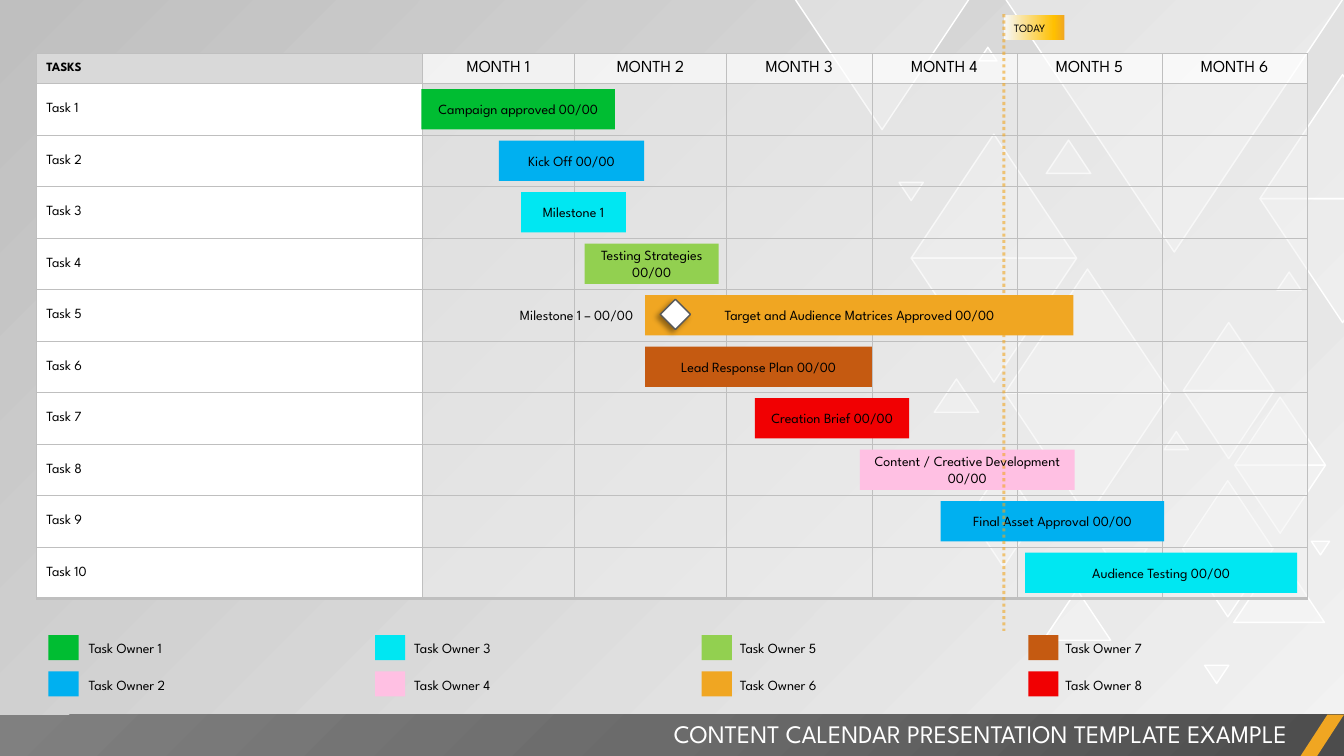
import dataclasses
import pptx
import pptx.dml.color
import pptx.enum.shapes
import pptx.enum.text
import pptx.oxml
import pptx.oxml.ns
import pptx.util

Pt = pptx.util.Pt
qn = pptx.oxml.ns.qn
Kind = pptx.enum.shapes.MSO_SHAPE
Align = pptx.enum.text.PP_ALIGN
Anchor = pptx.enum.text.MSO_ANCHOR
NAMESPACE = pptx.oxml.ns.nsdecls("a")


@dataclasses.dataclass(frozen=True)
class Theme:
    font: str = "League Spartan"
    title_size: float = 18
    month_size: float = 12
    body_size: float = 10
    head_size: float = 9
    flag_size: float = 8
    black: str = "000000"
    white: str = "FFFFFF"
    pale: str = "F2F2F2"
    head: str = "D9D9D9"
    rule: str = "BFBFBF"
    outline: str = "595959"
    green: str = "00BD32"
    blue: str = "00B0F0"
    cyan: str = "00E7F2"
    pink: str = "FFC0E3"
    lime: str = "92D050"
    amber: str = "F0A622"
    brown: str = "C55A11"
    red: str = "F10002"
    backdrop: tuple = ((0, "F2F2F2", 40), (100, "BFBFBF", 100))
    footer: tuple = ((0, "4C4C4C", 100), (50, "6B6B6B", 100), (100, "808080", 100))
    flag: tuple = ((0, "F6F8FC", 100), (83, "FFC000", 100), (100, "F0A622", 100))


@dataclasses.dataclass(frozen=True)
class Box:
    left: float
    top: float
    width: float
    height: float

    def inner(self, left, top, width, height):
        return Box(self.left + left, self.top + top, width, height)

    def lengths(self):
        return [Pt(value) for value in dataclasses.astuple(self)]


THEME = Theme()
PAGE = Box(0, 0, 960, 540)
HEADER_HEIGHT, ROW_HEIGHT, BAR_HEIGHT = 21.4, 36.8, 28.8
COLUMN_WIDTHS = [275.8] + [108.7] * 2 + [103.7] * 4
CALENDAR = Box(25.9, 38.2, sum(COLUMN_WIDTHS), HEADER_HEIGHT + 10 * ROW_HEIGHT)

TRIANGLES = [
    ("pair", 650.9, 95.8, 118.1), ("pair", 717.8, 192.2, 118.1),
    ("down", 717.8, -1.4, 241.9), ("up", 881.3, 396, 64.8),
    ("pair", 844.6, 343.4, 64.8), ("pair", 845.3, 230.4, 64.8),
    ("pair", 882, 283.7, 64.8), ("up", 745.2, 421.2, 48.2),
    ("pair", 692.6, 332.6, 48.2), ("pair", 900, 53.3, 118.1),
    ("down", 787.7, 391.7, 31.7), ("up", 667.4, 270.7, 31.7),
    ("up", 831.6, 308.2, 17.3), ("down", 860.4, 475.2, 17.3),
    ("down", 642.2, 130.3, 17.3), ("up", 912.2, 194.4, 17.3),
    ("up", 699.1, 33.8, 13), ("down", 936.7, 386.6, 13),
    ("up", 747.4, 100.1, 31.7), ("down", 567.4, -1.4, 125.3),
]
BARS = [
    ("Campaign approved 00/00", 275.1, 138.2, THEME.green),
    ("Kick Off 00/00", 330.5, 103.7, THEME.blue),
    ("Milestone 1", 346.3, 74.9, THEME.cyan),
    ("Testing Strategies 00/00", 391.7, 95.8, THEME.lime),
    ("Target and Audience Matrices Approved 00/00", 434.9, 306, THEME.amber),
    ("Lead Response Plan 00/00", 434.9, 162, THEME.brown),
    ("Creation Brief 00/00", 513.4, 110.2, THEME.red),
    ("Content / Creative Development 00/00", 588.3, 153.4, THEME.pink),
    ("Final Asset Approval 00/00", 645.9, 159.8, THEME.blue),
    ("Audience Testing 00/00", 706.3, 194.4, THEME.cyan),
]
OWNERS = [THEME.green, THEME.blue, THEME.cyan, THEME.pink,
          THEME.lime, THEME.amber, THEME.brown, THEME.red]


def color(value):
    return pptx.dml.color.RGBColor.from_string(value)


def set_opacity(element, percent):
    target = next(element.iter(qn("a:srgbClr")))
    target.append(pptx.oxml.parse_xml(f'<a:alpha {NAMESPACE} val="{percent * 1000}"/>'))


def set_gradient(element, stops, direction):
    marks = "".join(
        f'<a:gs pos="{place * 1000}"><a:srgbClr val="{value}">'
        f'<a:alpha val="{opacity * 1000}"/></a:srgbClr></a:gs>'
        for place, value, opacity in stops)
    solid = next(element.iter(qn("a:solidFill")))
    solid.getparent().replace(solid, pptx.oxml.parse_xml(
        f'<a:gradFill {NAMESPACE} rotWithShape="1"><a:gsLst>{marks}</a:gsLst>{direction}</a:gradFill>'))


def write(frame, text, size, align=Align.LEFT, ink=THEME.black, bold=False):
    para = frame.paragraphs[0]
    para.text = text
    para.alignment = align
    para.font.name = THEME.font
    para.font.size = Pt(size)
    para.font.bold = bold
    para.font.color.rgb = color(ink)


def add_block(page, kind, box, fill, outline=None):
    block = page.shapes.add_shape(kind, *box.lengths())
    block.shadow.inherit = False
    block.fill.solid()
    block.fill.fore_color.rgb = color(fill)
    if outline:
        block.line.color.rgb = color(outline)
        block.line.width = Pt(1)
    else:
        block.line.fill.background()
    block.text_frame.word_wrap = True
    block.text_frame.vertical_anchor = Anchor.MIDDLE
    return block


def add_label(page, box, text, align=Align.LEFT, anchor=Anchor.TOP):
    frame = page.shapes.add_textbox(*box.lengths()).text_frame
    frame.word_wrap = True
    frame.vertical_anchor = anchor
    write(frame, text, THEME.body_size, align)


def add_backdrop(page, box):
    page.background.fill.solid()
    page.background.fill.fore_color.rgb = color(THEME.pale)
    set_gradient(page.element, THEME.backdrop, '<a:lin ang="13500000" scaled="0"/>')
    for facing, left, top, width in TRIANGLES:
        height = width * 0.75
        for turn in ("up", "down") if facing == "pair" else (facing,):
            drop = height if facing == "pair" and turn == "down" else 0
            triangle = add_block(page, Kind.ISOSCELES_TRIANGLE,
                                 box.inner(left, top + drop, width, height), THEME.white, THEME.white)
            triangle.rotation = 180 if turn == "down" else 0
            set_opacity(triangle.element, 30)


def add_footer(page, box):
    band = add_block(page, Kind.RECTANGLE, box, THEME.outline)
    set_gradient(band.element, THEME.footer,
                 '<a:path path="circle"><a:fillToRect l="100000" t="100000"/></a:path>')
    accent = add_block(page, Kind.PARALLELOGRAM, box.inner(box.width - 31, 0, 31, box.height), THEME.amber)
    accent.adjustments[0] = 0.65
    title = page.shapes.title
    title.left, title.top, title.width, title.height = box.inner(378, -0.7, 548.6, 28.8).lengths()
    title.text_frame.word_wrap = True
    title.text_frame.auto_size = pptx.enum.text.MSO_AUTO_SIZE.NONE
    title.text_frame.vertical_anchor = Anchor.TOP
    write(title.text_frame, "CONTENT CALENDAR PRESENTATION TEMPLATE EXAMPLE",
          THEME.title_size, Align.RIGHT, THEME.white)
    accent.element.addnext(title.element)


def style_cell(cell, fill, opacity, bottom_width):
    cell.vertical_anchor = Anchor.MIDDLE
    cell.fill.solid()
    cell.fill.fore_color.rgb = color(fill)
    properties = cell._tc.get_or_add_tcPr()
    set_opacity(properties, opacity)
    for index, side in enumerate("LRTB"):
        width = Pt(bottom_width if side == "B" else 0.5)
        properties.insert(index, pptx.oxml.parse_xml(
            f'<a:ln{side} {NAMESPACE} w="{width}"><a:solidFill>'
            f'<a:srgbClr val="{THEME.rule}"/></a:solidFill></a:ln{side}>'))


def add_calendar(page, box):
    grid = page.shapes.add_table(len(BARS) + 1, len(COLUMN_WIDTHS), *box.lengths()).table
    grid.first_row = grid.horz_banding = False
    for column, width in zip(grid.columns, COLUMN_WIDTHS):
        column.width = Pt(width)
    for number, row in enumerate(grid.rows):
        row.height = Pt(ROW_HEIGHT if number else HEADER_HEIGHT)
        bottom_width = 3 if number == len(BARS) else 0.5
        for month, cell in enumerate(row.cells):
            if month == 0:
                style_cell(cell, THEME.white if number else THEME.head, 100, bottom_width)
                write(cell.text_frame, f"Task {number}" if number else "TASKS",
                      THEME.body_size if number else THEME.head_size, bold=number == 0)
            elif number == 0:
                style_cell(cell, THEME.white, 75, bottom_width)
                write(cell.text_frame, f"MONTH {month}", THEME.month_size, Align.CENTER)
            else:
                style_cell(cell, THEME.pale, 50, bottom_width)


def add_bars(page, box):
    tops = [HEADER_HEIGHT + ROW_HEIGHT * row + (ROW_HEIGHT - BAR_HEIGHT) / 2 for row in range(len(BARS))]
    for top, (text, left, width, fill) in zip(tops, BARS):
        bar = add_block(page, Kind.RECTANGLE, box.inner(left, top, width, BAR_HEIGHT), fill)
        write(bar.text_frame, text, THEME.body_size, Align.CENTER)
    milestone = add_block(page, Kind.DIAMOND, box.inner(445.7, tops[4] + 3, 21.6, 21.6),
                          THEME.white, THEME.outline)
    effects = next(milestone.element.iter(qn("a:effectLst")))
    effects.append(pptx.oxml.parse_xml(
        f'<a:outerShdw {NAMESPACE} blurRad="{Pt(4)}" dist="{Pt(3)}" dir="8100000">'
        f'<a:srgbClr val="{THEME.black}"><a:alpha val="40000"/></a:srgbClr></a:outerShdw>'))
    add_label(page, box.inner(277.2, tops[4], 156.2, BAR_HEIGHT),
              "Milestone 1 – 00/00", Align.RIGHT, Anchor.MIDDLE)


def add_legend(page, box):
    for index, fill in enumerate(OWNERS):
        column, row = divmod(index, 2)
        top = row * 25.9
        add_block(page, Kind.RECTANGLE, box.inner(column * 233.3, top, 21.6, 18), fill)
        add_label(page, box.inner(column * 232.6 + 21.6, top, 172.8, 19.4), f"Task Owner {index + 1}")


def add_today(page, box):
    flag = add_block(page, Kind.RECTANGLE, box.inner(0, 0.7, box.width, 18), THEME.amber)
    set_gradient(flag.element, THEME.flag, '<a:lin ang="0" scaled="0"/>')
    write(flag.text_frame, "TODAY", THEME.flag_size)
    marker = page.shapes.add_connector(
        pptx.enum.shapes.MSO_CONNECTOR.STRAIGHT,
        Pt(box.left), Pt(box.top), Pt(box.left), Pt(box.top + box.height))
    marker.line.color.rgb = color(THEME.amber)
    marker.line.width = Pt(2.25)
    marker.line.dash_style = pptx.enum.dml.MSO_LINE.ROUND_DOT
    set_opacity(marker.element, 60)
    marker.element.spPr.append(pptx.oxml.parse_xml(f"<a:effectLst {NAMESPACE}/>"))


def main():
    deck = pptx.Presentation()
    deck.slide_width, deck.slide_height = Pt(PAGE.width), Pt(PAGE.height)
    page = deck.slides.add_slide(deck.slide_layouts[5])
    add_backdrop(page, PAGE)
    add_footer(page, PAGE.inner(0, 510.5, PAGE.width, 29.5))
    add_calendar(page, CALENDAR)
    add_bars(page, CALENDAR)
    add_legend(page, PAGE.inner(34.6, 453.6, 891, 46))
    add_today(page, PAGE.inner(717.1, 10.1, 43.2, 440.6))
    deck.save("out.pptx")


if __name__ == "__main__":
    main()
